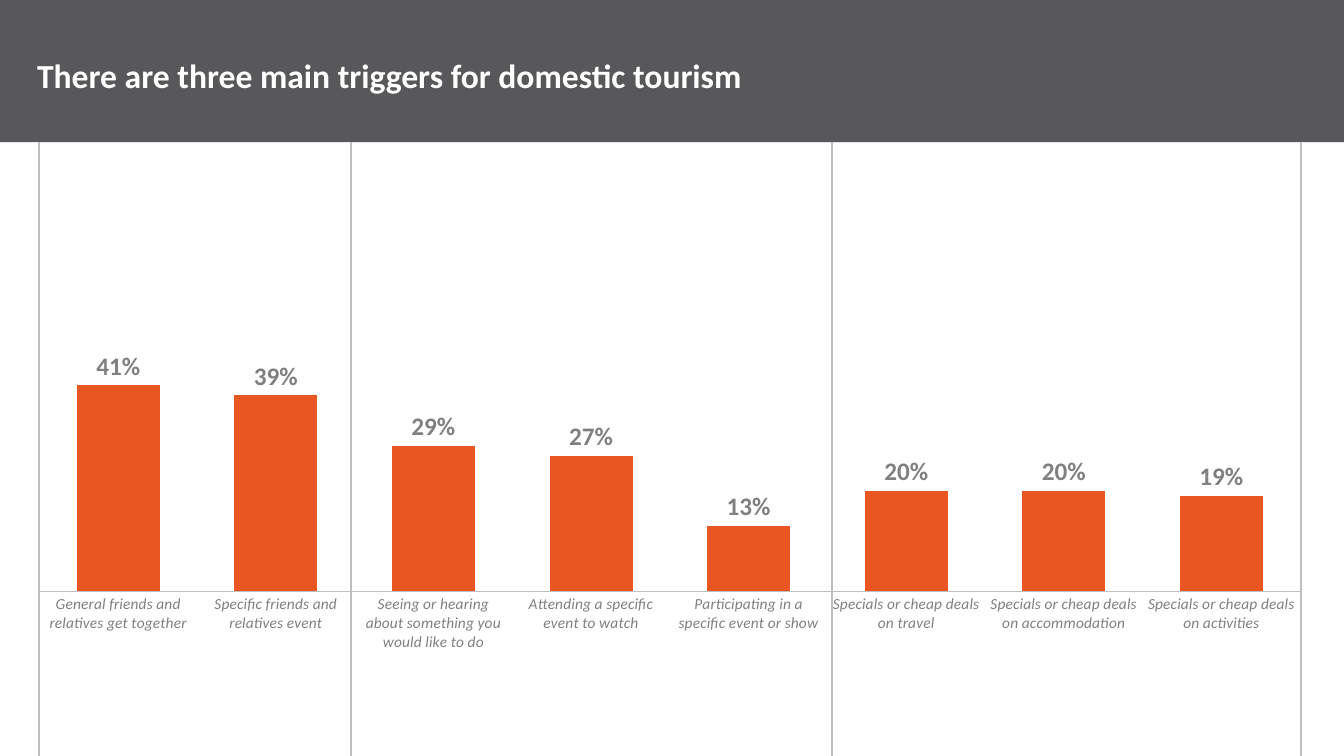
from lxml import etree
from pptx import Presentation
from pptx.chart.data import CategoryChartData
from pptx.dml.color import RGBColor
from pptx.enum import chart as charts, shapes, text
from pptx.oxml import parse_xml
from pptx.oxml.ns import nsdecls, qn
from pptx.util import Pt

TITLE = "There are three main triggers for domestic tourism"
TRIGGERS = [
    ("General friends and relatives get together", 0.41),
    ("Specific friends and relatives event", 0.39),
    ("Seeing or hearing about something you would like to do", 0.29),
    ("Attending a specific event to watch", 0.27),
    ("Participating in a specific event or show", 0.13),
    ("Specials or cheap deals on travel", 0.20),
    ("Specials or cheap deals on accommodation", 0.20),
    ("Specials or cheap deals on activities", 0.19),
]
THEME = {
    "font": "Calibri",
    "band": RGBColor(0x58, 0x58, 0x5A),
    "title": RGBColor(0xFF, 0xFF, 0xFF),
    "bar": RGBColor(0xE9, 0x56, 0x21),
    "label": RGBColor(0x80, 0x80, 0x80),
    "rule": RGBColor(0xBF, 0xBF, 0xBF),
    "title_size": Pt(24),
    "value_size": Pt(18),
    "category_size": Pt(11),
}
WIDTH, HEIGHT, BAND_HEIGHT = 960, 540, 101.5
TITLE_BOX = (19.4, 35.3, 922.3, 36)
CHART_BOX = (9.4, 241.9, 941, 275.8)
PLOT = {"x": 0.02, "y": 0.069, "w": 0.957, "h": 0.585}
DIVIDERS = [28.1, 250.6, 594, 929.5]


def assign(target, **values):
    for name, value in values.items():
        setattr(target, name, value)


def style_font(font, size, color, **extra):
    assign(font, name=THEME["font"], size=THEME[size], **extra)
    font.color.rgb = THEME[color]


def add_header(page):
    band = page.shapes.add_shape(shapes.MSO_SHAPE.RECTANGLE, 0, 0, Pt(WIDTH), Pt(BAND_HEIGHT))
    band.shadow.inherit = False
    band.fill.solid()
    band.fill.fore_color.rgb = THEME["band"]
    band.line.fill.background()
    box = page.shapes.add_textbox(*map(Pt, TITLE_BOX))
    assign(box.text_frame, word_wrap=True, vertical_anchor=text.MSO_ANCHOR.MIDDLE)
    span = box.text_frame.paragraphs[0].add_run()
    span.text = TITLE
    style_font(span.font, "title_size", "title", bold=True)


def fix_plot_area(chart):
    """Pin the inner plot area to the fractions in PLOT."""
    sizes = "".join(f'<c:{key} val="{value}"/>' for key, value in PLOT.items())
    layout = parse_xml(
        f'<c:layout {nsdecls("c")}><c:manualLayout><c:layoutTarget val="inner"/>'
        f'<c:xMode val="edge"/><c:yMode val="edge"/>{sizes}</c:manualLayout></c:layout>')
    area = chart.plots[0]._element.getparent()
    for old in area.findall(qn("c:layout")):
        area.remove(old)
    area.insert(0, layout)


def add_trigger_chart(page):
    data = CategoryChartData(number_format="0%")
    data.categories = [name for name, _ in TRIGGERS]
    data.add_series("Series 1", [share for _, share in TRIGGERS])
    chart = page.shapes.add_chart(
        charts.XL_CHART_TYPE.COLUMN_CLUSTERED, *map(Pt, CHART_BOX), data).chart
    assign(chart, has_legend=False, has_title=False)
    style_font(chart.font, "category_size", "label")
    fix_plot_area(chart)

    assign(chart.value_axis, visible=False, has_major_gridlines=False,
           minimum_scale=0, maximum_scale=0.45)
    axis = chart.category_axis
    assign(axis, major_tick_mark=charts.XL_TICK_MARK.NONE, has_major_gridlines=False)
    axis.format.line.color.rgb = THEME["rule"]
    axis.format.line.width = Pt(0.75)
    style_font(axis.tick_labels.font, "category_size", "label", italic=True)

    plot = chart.plots[0]
    assign(plot, gap_width=90, overlap=-27, vary_by_categories=False, has_data_labels=True)
    fill = plot.series[0].format.fill
    fill.solid()
    fill.fore_color.rgb = THEME["bar"]
    labels = plot.data_labels
    assign(labels, show_value=True, number_format="0%", number_format_is_linked=False,
           position=charts.XL_LABEL_POSITION.OUTSIDE_END)
    style_font(labels.font, "value_size", "label", bold=True)


def add_divider(page, x):
    line = page.shapes.add_connector(
        shapes.MSO_CONNECTOR.STRAIGHT, Pt(x), Pt(BAND_HEIGHT), Pt(x), Pt(HEIGHT))
    line.line.color.rgb = THEME["rule"]
    line.line.width = Pt(1.5)
    etree.SubElement(line._element.spPr, qn("a:effectLst"))


def main():
    deck = Presentation()
    assign(deck, slide_width=Pt(WIDTH), slide_height=Pt(HEIGHT))
    page = deck.slides.add_slide(deck.slide_layouts[6])
    add_header(page)
    add_trigger_chart(page)
    for x in DIVIDERS:
        add_divider(page, x)
    deck.save("out.pptx")


if __name__ == "__main__":
    main()
